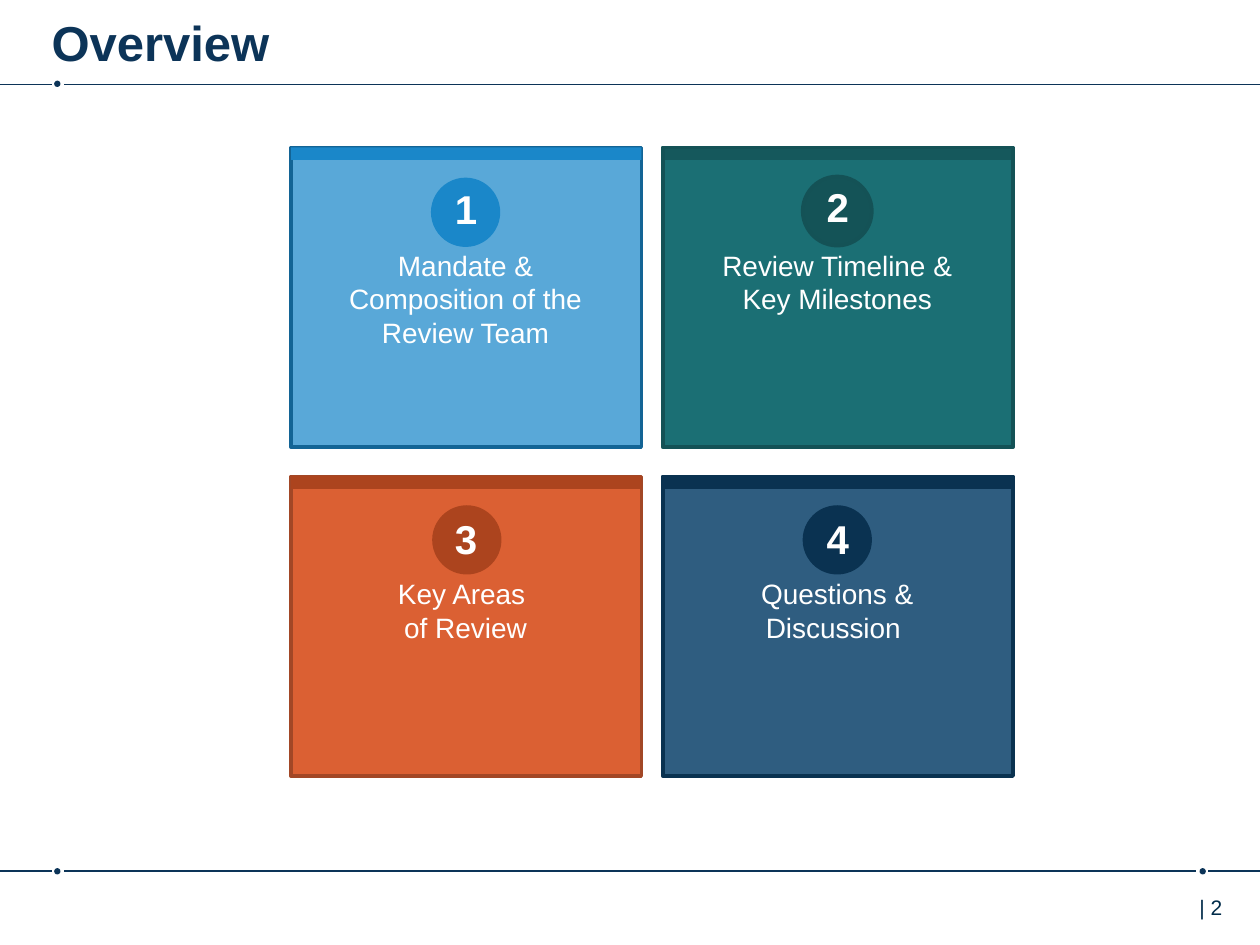
from dataclasses import dataclass

import lxml.etree
import pptx
import pptx.dml.color
import pptx.enum.shapes
import pptx.enum.text
import pptx.oxml.ns
import pptx.util

Inches = pptx.util.Inches
Pt = pptx.util.Pt
Shape = pptx.enum.shapes.MSO_SHAPE
Align = pptx.enum.text.PP_ALIGN
qn = pptx.oxml.ns.qn

NAVY = "0C3458"
WHITE = "FFFFFF"
WIDE, HIGH, BAR = 2.78, 2.38, 0.1
LEFT, TOP = 2.31, 1.17
STEP_X, STEP_Y = 2.95, 2.61
DISC, DOT = 0.55, 0.05


@dataclass
class Card:
    lines: list[str]
    fill: str
    edge: str
    dark: str
    solid: int = 100
    bar_solid: int = 100
    disc_x: float = 1.11
    disc_y: float = 0.23
    num_y: float = 0.25
    ring: bool = False


CARDS = [
    Card(["Mandate & Composition of the Review Team"], "1A87C9", "136495",
         "1A87C9", solid=72, disc_y=0.24, num_y=0.24),
    Card(["Review Timeline & Key Milestones"], "1B6F74", "145256",
         "145357", bar_solid=80, num_y=0.23, ring=True),
    Card(["Key Areas ", "of Review"], "DB6033", "A24726", "AC441E",
         disc_x=1.12),
    Card(["Questions & Discussion "], "0D436C", "0A3250", "0A3251",
         solid=86),
]


def paint(form, color: str, solid: int = 100) -> None:
    form.solid()
    form.fore_color.rgb = pptx.dml.color.RGBColor.from_string(color)
    if solid < 100:
        node = form._xPr.find(".//" + qn("a:srgbClr"))
        lxml.etree.SubElement(node, qn("a:alpha"), val=str(solid * 1000))


def add_form(slide, kind, x: float, y: float, w: float, h: float,
             color: str, solid: int = 100, edge: str = "") -> None:
    shape = slide.shapes.add_shape(
        kind, Inches(x), Inches(y), Inches(w), Inches(h))
    shape.shadow.inherit = False
    paint(shape.fill, color, solid)
    if edge:
        paint(shape.line.fill, edge)
        shape.line.width = Pt(2)
    else:
        shape.line.fill.background()


def add_rule(slide, start: float, end: float, y: float) -> None:
    rule = slide.shapes.add_connector(
        pptx.enum.shapes.MSO_CONNECTOR.STRAIGHT,
        Inches(start), Inches(y), Inches(end), Inches(y))
    paint(rule.line.fill, NAVY)
    rule.line.width = Pt(1)
    lxml.etree.SubElement(rule._element.spPr, qn("a:effectLst"))


def add_text(slide, x: float, y: float, w: float, h: float,
             lines: list[str], size: int, color: str = WHITE,
             bold: bool = False, align=Align.CENTER,
             side: float = 0.1) -> None:
    box = slide.shapes.add_textbox(
        Inches(x), Inches(y), Inches(w), Inches(h))
    frame = box.text_frame
    frame.word_wrap = True
    frame.margin_left = frame.margin_right = Inches(side)
    for i, line in enumerate(lines):
        para = frame.add_paragraph() if i else frame.paragraphs[0]
        para.alignment = align
        run = para.add_run()
        run.text = line
        run.font.name = "Arial"
        run.font.size = Pt(size)
        run.font.bold = bold
        paint(run.font.fill, color)


def add_card(slide, index: int, card: Card) -> None:
    row, col = divmod(index, 2)
    x, y = LEFT + col * STEP_X, TOP + row * STEP_Y
    add_form(slide, Shape.RECTANGLE, x, y, WIDE, HIGH,
             card.fill, card.solid, card.edge)
    add_form(slide, Shape.RECTANGLE, x, y, WIDE, BAR,
             card.dark, card.bar_solid)
    add_form(slide, Shape.OVAL, x + card.disc_x, y + card.disc_y,
             DISC, DISC, card.dark, edge=card.edge if card.ring else "")
    add_text(slide, x + 0.25, y + 0.75, 2.27, 0.64, card.lines, 16)
    add_text(slide, x, y + card.num_y, WIDE, 0.49,
             [str(index + 1)], 23, bold=True)


def main() -> None:
    deck = pptx.Presentation()
    deck.slide_width, deck.slide_height = Inches(10), Inches(7.5)
    slide = deck.slides.add_slide(deck.slide_layouts[6])

    for x, y in [(0.43, 0.64), (0.43, 6.89), (9.52, 6.89)]:
        add_form(slide, Shape.OVAL, x, y, DOT, DOT, NAVY)
    for start, end, y in [(0.41, 0, 0.67), (10, 0.51, 0.67),
                          (0.41, 0, 6.91), (9.49, 0.51, 6.91),
                          (9.59, 10, 6.91)]:
        add_rule(slide, start, end, y)

    for index, card in enumerate(CARDS):
        add_card(slide, index, card)

    add_text(slide, 0.41, 0.05, 8.76, 0.49, ["Overview"], 28, NAVY,
             bold=True, align=Align.LEFT, side=0)
    add_text(slide, 9.42, 7.05, 0.58, 0.4, ["| 2"], 12, "002B49",
             align=Align.LEFT)
    deck.save("out.pptx")


if __name__ == "__main__":
    main()
